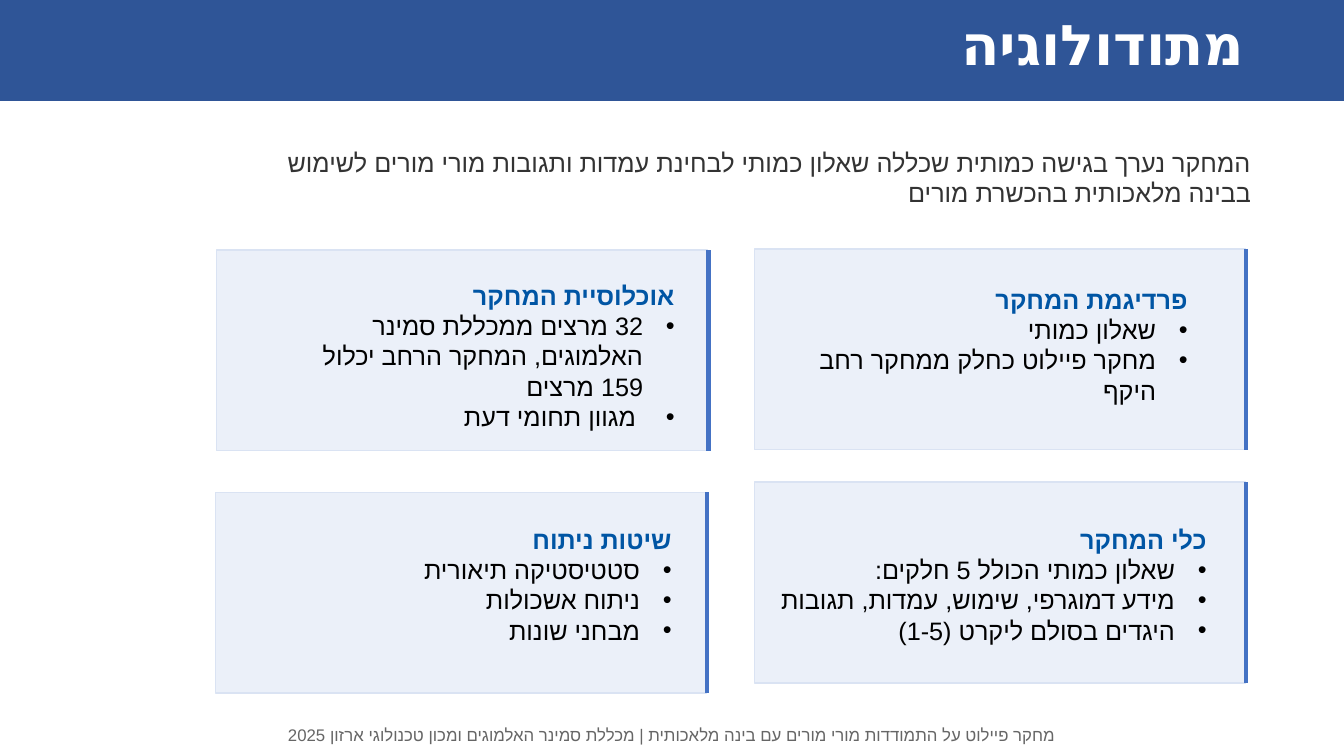
from pptx import Presentation
from pptx.dml.color import RGBColor
from pptx.enum.shapes import MSO_CONNECTOR as Connector, MSO_SHAPE as Shape
from pptx.enum.text import MSO_ANCHOR as Anchor, MSO_AUTO_SIZE as AutoSize, PP_ALIGN as Align
from pptx.oxml.ns import qn
from pptx.util import Pt
from lxml.etree import SubElement

NAVY = RGBColor(0x2F, 0x55, 0x97)
ACCENT = RGBColor(0x44, 0x72, 0xC4)
CARD_FILL = RGBColor(0xEB, 0xF0, 0xF9)
CARD_EDGE = RGBColor(0xDA, 0xE3, 0xF3)
HEADING = RGBColor(0x00, 0x55, 0xA4)
BLACK = RGBColor(0x00, 0x00, 0x00)
DARK_GRAY = RGBColor(0x33, 0x33, 0x33)
GRAY = RGBColor(0x66, 0x66, 0x66)
WHITE = RGBColor(0xFF, 0xFF, 0xFF)

CARD_WIDTH, CARD_HEIGHT = 350.8, 143.4
BULLET_INDENT = Pt(22.5)

# Heading, bullets, card corner, text box (left, top, width, height)
CARDS = [
    ("פרדיגמת המחקר",
     ["שאלון כמותי", "מחקר פיילוט כחלק ממחקר רחב היקף"],
     (538.8, 177.8), (572.4, 199.4, 283, 95)),
    ("כלי המחקר",
     ["שאלון כמותי הכולל 5 חלקים:", "מידע דמוגרפי, שימוש, עמדות, תגובות",
      "היגדים בסולם ליקרט (1-5)"],
     (538.8, 344.4), (388.8, 370.8, 480.2, 94.3)),
    ("שיטות ניתוח",
     ["סטטיסטיקה תיאורית", "ניתוח אשכולות", "מבחני שונות"],
     (154, 351.6), (172.8, 370.8, 314, 94.3)),
    ("אוכלוסיית המחקר",
     ["32 מרצים ממכללת סמינר האלמוגים, המחקר הרחב יכלול 159 מרצים",
      " מגוון תחומי דעת"],
     (154.8, 178.6), (194, 196.6, 294.9, 116.6)),
]


def write_hebrew(paragraph, text, size, color, bold=False, align=Align.RIGHT, font_name="Arial"):
    paragraph.alignment = align
    paragraph._p.get_or_add_pPr().set("rtl", "1")
    run = paragraph.add_run()
    run.text = text
    font = run.font
    font.name, font.size, font.bold = font_name, Pt(size), bold
    font.color.rgb = color
    properties = run._r.get_or_add_rPr()
    properties.set("lang", "he-IL")
    SubElement(properties, qn("a:cs")).set("typeface", font_name)


def add_text_frame(left, top, width, height):
    box = slide.shapes.add_textbox(Pt(left), Pt(top), Pt(width), Pt(height))
    box.text_frame.word_wrap = True
    return box.text_frame


presentation = Presentation()
presentation.slide_width, presentation.slide_height = Pt(960), Pt(540)
slide = presentation.slides.add_slide(presentation.slide_layouts[5])

# Title band
title = slide.shapes.title
title.left, title.top, title.width, title.height = Pt(0), Pt(-5), Pt(960), Pt(77)
title.fill.solid()
title.fill.fore_color.rgb = NAVY
title_frame = title.text_frame
title_frame.auto_size = AutoSize.NONE
title_frame.vertical_anchor = Anchor.MIDDLE
title_frame.margin_right = Pt(71.3)
title_paragraph = title_frame.paragraphs[0]
title_paragraph.line_spacing = 0.9
write_hebrew(title_paragraph, "מתודולוגיה", 40, WHITE, bold=True, font_name="Calibri")

# Card panels, each with an accent line on its right side
for heading, bullets, (left, top), text_area in CARDS:
    group = slide.shapes.add_group_shape()
    panel = group.shapes.add_shape(
        Shape.RECTANGLE, Pt(left), Pt(top), Pt(CARD_WIDTH), Pt(CARD_HEIGHT))
    panel.shadow.inherit = False
    panel.fill.solid()
    panel.fill.fore_color.rgb = CARD_FILL
    panel.line.color.rgb = CARD_EDGE
    panel.line.width = Pt(1)
    edge = left + CARD_WIDTH + 0.5
    accent = group.shapes.add_connector(
        Connector.STRAIGHT, Pt(edge), Pt(top), Pt(edge), Pt(top + CARD_HEIGHT))
    accent.line.color.rgb = ACCENT
    accent.line.width = Pt(3)
    SubElement(accent._element.spPr, qn("a:effectLst"))

# Card texts
for heading, bullets, corner, text_area in CARDS:
    frame = add_text_frame(*text_area)
    write_hebrew(frame.paragraphs[0], heading, 18, HEADING, bold=True)
    for bullet in bullets:
        paragraph = frame.add_paragraph()
        write_hebrew(paragraph, bullet, 18, BLACK)
        properties = paragraph._p.get_or_add_pPr()
        properties.set("marL", str(BULLET_INDENT))
        properties.set("indent", str(-BULLET_INDENT))
        SubElement(properties, qn("a:buFont")).set("typeface", "Arial")
        SubElement(properties, qn("a:buChar")).set("char", "•")

# Footer
footer = add_text_frame(0, 514, 960, 21.8)
write_hebrew(
    footer.paragraphs[0],
    "מחקר פיילוט על התמודדות מורי מורים עם בינה מלאכותית | "
    "מכללת סמינר האלמוגים ומכון טכנולוגי ארזון 2025",
    12, GRAY, align=Align.CENTER)

# Introduction
introduction = add_text_frame(154, 101.5, 746.8, 51)
write_hebrew(
    introduction.paragraphs[0],
    "המחקר נערך בגישה כמותית שכללה שאלון כמותי לבחינת עמדות ותגובות "
    "מורי מורים לשימוש בבינה מלאכותית בהכשרת מורים",
    18, DARK_GRAY)

presentation.save("out.pptx")
